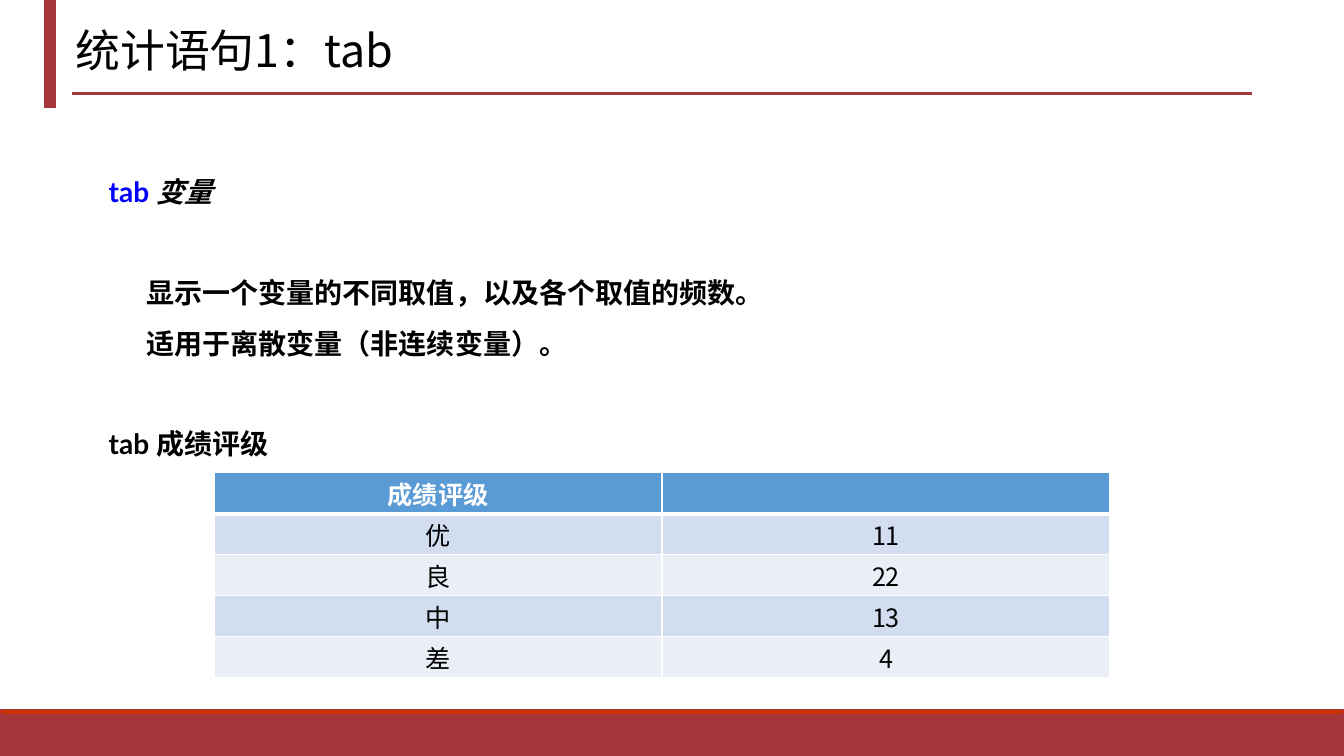
from lxml import etree
from pptx import Presentation
from pptx.dml.color import RGBColor
from pptx.enum import shapes, text
from pptx.oxml import ns
from pptx.util import Pt

COLORS = {
    "red": "A6363A", "orange": "CC3300", "blue": "0000FF", "black": "000000",
    "white": "FFFFFF", "header": "5B9BD5", "odd": "D2DEEF", "even": "EAEFF7",
}
LATO, NOTO = "Lato", "Noto Sans CJK SC"
GRADES = [("成绩评级", ""), ("优", "11"), ("良", "22"), ("中", "13"), ("差", "4")]
# Runs, left indent and space before of each paragraph
BODY = [
    ([("tab ", "blue", False), ("变量", "black", True)], 0, 0),
    ([("显示一个变量的不同取值，以及各个取值的频数。", "black", False)], 27, 36),
    ([("适用于离散变量（非连续变量）。", "black", False)], 27, 0),
    ([("tab 成绩评级", "black", False)], 0, 36),
]


def rgb(name):
    return RGBColor.from_string(COLORS[name])


def set_font(font, name, size, color, bold=False):
    font.name, font.size, font.bold = name, Pt(size), bold
    font.color.rgb = rgb(color)


def add_bar(s, left, top, width, height, fill):
    sp = s.shapes.add_shape(shapes.MSO_SHAPE.RECTANGLE,
                            Pt(left), Pt(top), Pt(width), Pt(height))
    sp.shadow.inherit = False
    sp.fill.solid()
    sp.fill.fore_color.rgb = rgb(fill)
    sp.line.color.rgb = rgb("red")
    sp.line.width = Pt(1)


def add_rule(s, left, right, y):
    line = s.shapes.add_connector(shapes.MSO_CONNECTOR.STRAIGHT,
                                  Pt(left), Pt(y), Pt(right), Pt(y))
    line.line.color.rgb = rgb("red")
    line.line.width = Pt(2.25)
    etree.SubElement(line._element.spPr, ns.qn("a:effectLst"))


def add_text_frame(s, left, top, width, height):
    tf = s.shapes.add_textbox(Pt(left), Pt(top), Pt(width), Pt(height)).text_frame
    tf.word_wrap = True
    return tf


def add_title(s, title):
    tf = add_text_frame(s, 46.8, -1.4, 813.6, 78.5)
    tf.vertical_anchor = text.MSO_ANCHOR.MIDDLE
    p = tf.paragraphs[0]
    p.text = title
    p.line_spacing = 0.9
    set_font(p.font, NOTO, 32, "black")


def add_body(s):
    tf = add_text_frame(s, 70.6, 109.4, 804.2, 294.5)
    for i, (runs, indent, before) in enumerate(BODY):
        p = tf.add_paragraph() if i else tf.paragraphs[0]
        p.line_spacing = 1.5
        p.space_before = Pt(before)
        p._p.get_or_add_pPr().set("marL", str(Pt(indent)))
        for words, color, italic in runs:
            r = p.add_run()
            r.text = words
            set_font(r.font, LATO, 20, color, bold=True)
            r.font.italic = italic


def set_borders(cell, bottom):
    """Draw white cell borders, one point wide except for the bottom one."""
    tc_pr = cell._tc.get_or_add_tcPr()
    for i, (side, width) in enumerate(
            [("lnL", 1), ("lnR", 1), ("lnT", 1), ("lnB", bottom)]):
        ln = etree.Element(ns.qn(f"a:{side}"), w=str(Pt(width)))
        fill = etree.SubElement(ln, ns.qn("a:solidFill"))
        etree.SubElement(fill, ns.qn("a:srgbClr"), val=COLORS["white"])
        tc_pr.insert(i, ln)


def add_grades(s):
    table = s.shapes.add_table(len(GRADES), 2, Pt(152.9), Pt(337.7),
                               Pt(640), Pt(146.25)).table
    for i, values in enumerate(GRADES):
        header = i == 0
        table.rows[i].height = Pt(29.25)
        for j, value in enumerate(values):
            cell = table.cell(i, j)
            cell.margin_top, cell.margin_bottom = Pt(2), Pt(1)
            cell.fill.solid()
            cell.fill.fore_color.rgb = rgb(
                "header" if header else "odd" if i % 2 else "even")
            set_borders(cell, 3 if header else 1)
            p = cell.text_frame.paragraphs[0]
            p.text = value
            p.alignment = text.PP_ALIGN.CENTER
            set_font(p.font, LATO if header else NOTO, 18,
                     "white" if header else "black", bold=header)


def main():
    prs = Presentation()
    prs.slide_width, prs.slide_height = Pt(960), Pt(540)
    s = prs.slides.add_slide(prs.slide_layouts[6])
    add_bar(s, 0, 510.2, 960, 29.8, "red")
    add_bar(s, 0, 506.6, 960, 3.6, "orange")
    add_bar(s, 31.7, 0, 7.9, 77, "red")
    add_rule(s, 51.1, 894.2, 67)
    add_title(s, "统计语句1：tab")
    add_body(s)
    add_grades(s)
    prs.save("out.pptx")


if __name__ == "__main__":
    main()
